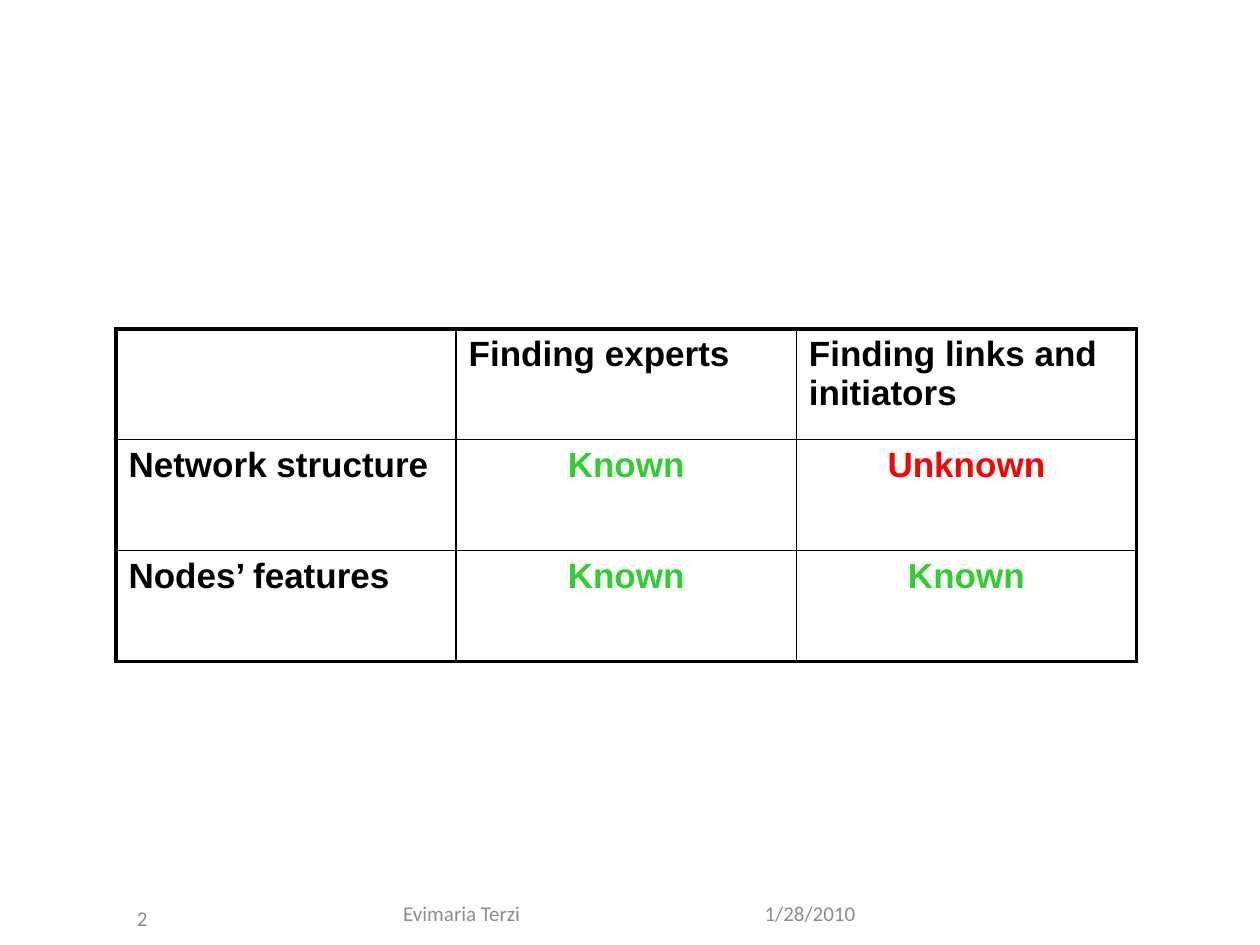
from dataclasses import dataclass

import lxml.etree
import pptx
import pptx.dml.color
import pptx.enum.text
import pptx.oxml.ns
import pptx.util

COLORS = {"black": "000000", "gray": "8C8C8C", "green": "33CC33", "red": "FF0000"}
ALIGN = pptx.enum.text.PP_ALIGN
WIDTH, HEIGHT = 10, 7.5
FOOTER_TOP = 7.11
TABLE_LEFT, TABLE_TOP = 0.92, 2.61
COLUMN_WIDTH, ROW_HEIGHT = 2.7, 0.88
OUTER_LINE, INNER_LINE = 2.25, 1


@dataclass
class Footer:
    text: str
    left: float
    width: float
    height: float
    align: ALIGN


@dataclass
class Entry:
    text: str
    color: str = "black"
    align: ALIGN = ALIGN.LEFT


KNOWN = Entry("Known", "green", ALIGN.CENTER)
UNKNOWN = Entry("Unknown", "red", ALIGN.CENTER)
ENTRIES = [
    [Entry(""), Entry("Finding experts"), Entry("Finding links and initiators")],
    [Entry("Network structure"), KNOWN, UNKNOWN],
    [Entry("Nodes’ features"), KNOWN, KNOWN],
]
FOOTERS = [
    Footer("2", 0.17, 1.1, 0.35, ALIGN.RIGHT),
    Footer("Evimaria Terzi", 1.58, 4.17, 0.27, ALIGN.CENTER),
    Footer("1/28/2010", 5.97, 2.13, 0.27, ALIGN.LEFT),
]


def style_paragraph(paragraph, font: str, size: float, color: str, align: ALIGN, bold: bool = False) -> None:
    paragraph.alignment = align
    paragraph.font.name = font
    paragraph.font.size = pptx.util.Pt(size)
    paragraph.font.bold = bold
    paragraph.font.color.rgb = pptx.dml.color.RGBColor.from_string(COLORS[color])


def add_footer(page, footer: Footer) -> None:
    lengths = (footer.left, FOOTER_TOP, footer.width, footer.height)
    box = page.shapes.add_textbox(*map(pptx.util.Inches, lengths))
    frame = box.text_frame
    frame.word_wrap = True
    frame.vertical_anchor = pptx.enum.text.MSO_ANCHOR.MIDDLE
    frame.text = footer.text
    style_paragraph(frame.paragraphs[0], "Calibri", 12, "gray", footer.align)


def add_child(parent, tag: str, **attributes: str):
    return lxml.etree.SubElement(parent, pptx.oxml.ns.qn(tag), attributes)


def set_spacing(paragraph, before: int, after: int) -> None:
    """Set paragraph gaps as percentages of the text size."""
    properties = paragraph._p.get_or_add_pPr()
    for index, (tag, percent) in enumerate((("a:spcBef", before), ("a:spcAft", after))):
        spacing = add_child(properties, tag)
        add_child(spacing, "a:spcPct", val=str(percent * 1000))
        properties.insert(index, spacing)


def set_borders(cell, row: int, column: int) -> None:
    """Draw thick lines on the table's outer edges and thin ones inside."""
    edges = {
        "a:lnL": column == 0,
        "a:lnR": column == len(ENTRIES[0]) - 1,
        "a:lnT": row == 0,
        "a:lnB": row == len(ENTRIES) - 1,
    }
    properties = cell._tc.get_or_add_tcPr()
    for index, (tag, is_outer) in enumerate(edges.items()):
        width = pptx.util.Pt(OUTER_LINE if is_outer else INNER_LINE)
        line = add_child(properties, tag, w=str(int(width)))
        add_child(add_child(line, "a:solidFill"), "a:srgbClr", val=COLORS["black"])
        properties.insert(index, line)


def add_comparison(page) -> None:
    rows, columns = len(ENTRIES), len(ENTRIES[0])
    lengths = (TABLE_LEFT, TABLE_TOP, columns * COLUMN_WIDTH, rows * ROW_HEIGHT)
    table = page.shapes.add_table(rows, columns, *map(pptx.util.Inches, lengths)).table
    table.first_row = table.horz_banding = False
    for row, entries in enumerate(ENTRIES):
        for column, entry in enumerate(entries):
            cell = table.cell(row, column)
            cell.fill.background()
            cell.text = entry.text
            paragraph = cell.text_frame.paragraphs[0]
            style_paragraph(paragraph, "Arial", 20, entry.color, entry.align, bold=True)
            set_spacing(paragraph, 35, 15)
            set_borders(cell, row, column)


def main() -> None:
    deck = pptx.Presentation()
    deck.slide_width = pptx.util.Inches(WIDTH)
    deck.slide_height = pptx.util.Inches(HEIGHT)
    page = deck.slides.add_slide(deck.slide_layouts[6])
    for footer in FOOTERS:
        add_footer(page, footer)
    add_comparison(page)
    deck.save("out.pptx")


if __name__ == "__main__":
    main()
